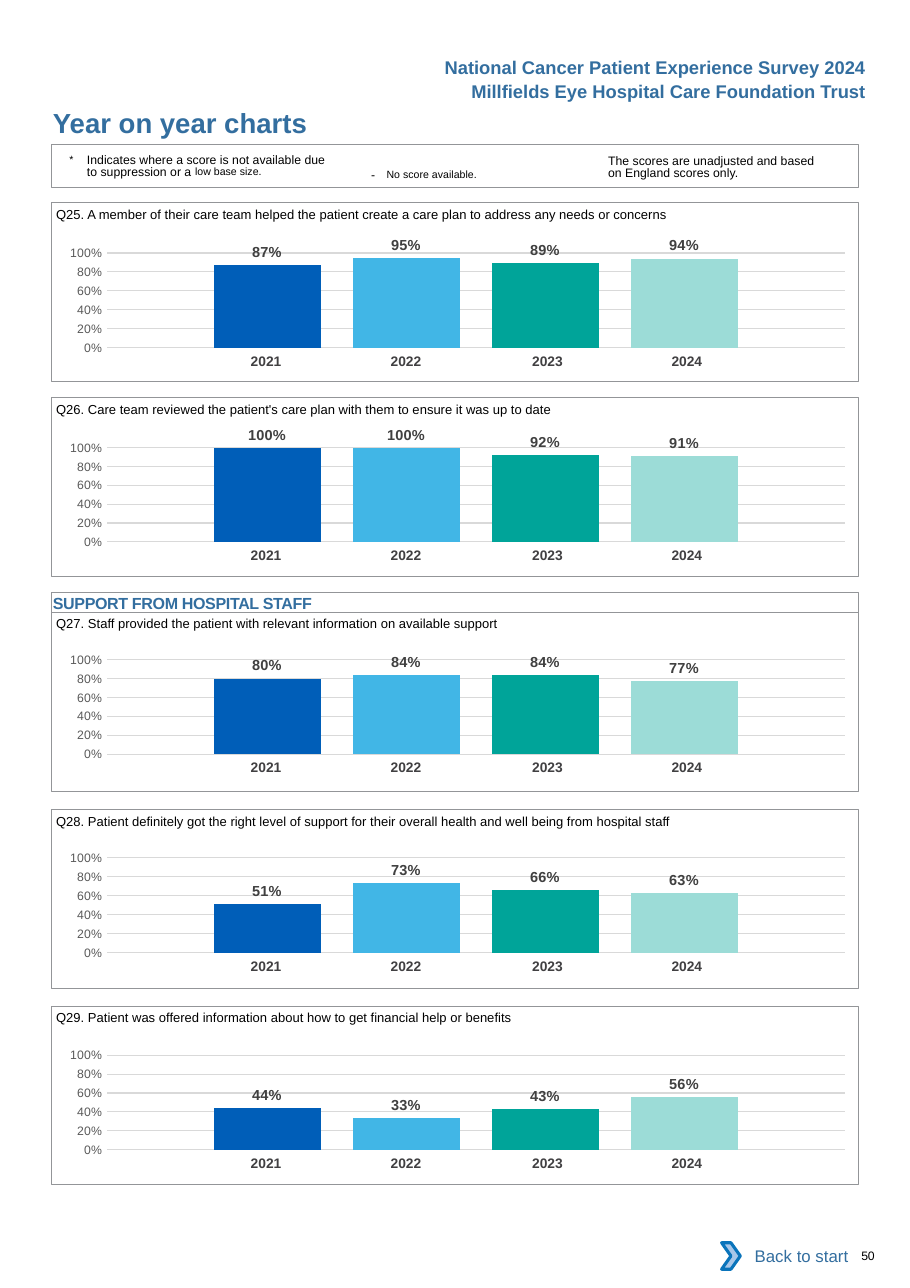
from lxml import etree
from pptx import Presentation
from pptx.chart.data import CategoryChartData
from pptx.dml.color import RGBColor
from pptx.enum import chart as ch, shapes, text as tx
from pptx.oxml.ns import qn
from pptx.util import Inches, Pt

BLUE = RGBColor(0x33, 0x6E, 0x9F)
BLACK = RGBColor(0, 0, 0)
WHITE = RGBColor(0xFF, 0xFF, 0xFF)
EDGE = RGBColor(0x93, 0x95, 0x98)
GRID = RGBColor(0xD9, 0xD9, 0xD9)
TICK = RGBColor(0x59, 0x59, 0x59)
LABEL = RGBColor(0x40, 0x40, 0x40)
YEAR = RGBColor(0x41, 0x40, 0x42)
ARROW = RGBColor(0xA8, 0xC7, 0xE9)
RIM = RGBColor(0x0A, 0x74, 0xBB)
BARS = [RGBColor(0x00, 0x5E, 0xB8), RGBColor(0x41, 0xB6, 0xE6),
        RGBColor(0x00, 0xA4, 0x99), RGBColor(0x9C, 0xDC, 0xD7)]

TITLE = "Year on year charts"
HEADS = ["National Cancer Patient Experience Survey 2024",
         "Millfields Eye Hospital Care Foundation Trust"]
SECTION = "SUPPORT FROM HOSPITAL STAFF"
YEARS = ["2021", "2022", "2023", "2024"]
# frame top, chart top, question, scores
PANELS = [
    (1.84, 2.11, "Q25. A member of their care team helped the patient create a care plan "
     "to address any needs or concerns", (0.87, 0.95, 0.89, 0.94)),
    (3.61, 3.87, "Q26. Care team reviewed the patient's care plan with them to ensure "
     "it was up to date", (1, 1, 0.92, 0.91)),
    (5.56, 5.80, "Q27. Staff provided the patient with relevant information on "
     "available support", (0.80, 0.84, 0.84, 0.77)),
    (7.35, 7.60, "Q28. Patient definitely got the right level of support for their "
     "overall health and well being from hospital staff", (0.51, 0.73, 0.66, 0.63)),
    (9.13, 9.39, "Q29. Patient was offered information about how to get financial help "
     "or benefits", (0.44, 0.33, 0.43, 0.56)),
]
# runs: text, size, baseline shift, letter spacing
SUPPRESS = [("*\t", 12, 3, 0),
            ("Indicates where a score is not available due to suppression or a ", 8, 0, 0),
            ("low base size.", 12, 7, 0)]
MISSING = [("- ", 8, 0, 2.6), ("No score available.", 12, 3, 0)]
BASIS = [("The scores are unadjusted and based on England scores only.", 8, 0, 0)]

LEFT, WIDE = 0.47, 7.32
RIGHT = 7.96
COLS = [1.27, 1.27, 1.34, 1.27]
INSETS = [0, 0, 0.04, 0.12]
PLOT = {"x": 0.079, "y": 0.145, "w": 0.915, "h": 0.666}
BARE = "{2D5ABB26-0587-4C30-8999-92F81FD0307C}"

deck = Presentation()
deck.slide_width, deck.slide_height = Inches(8.26), Inches(11.69)
page = deck.slides.add_slide(deck.slide_layouts[5])


def style(font, size, color=BLACK, bold=False):
    for key, val in {"name": "Arial", "size": Pt(size), "bold": bold}.items():
        setattr(font, key, val)
    font.color.rgb = color


def fill(frame, runs, color=BLACK, bold=False, pad=(0, 0, 0, 0),
         align=tx.PP_ALIGN.LEFT, anchor=tx.MSO_ANCHOR.TOP):
    """Write runs of (text, size, baseline, spacing) into a text frame."""
    sides = ("margin_left", "margin_top", "margin_right", "margin_bottom")
    for side, gap in zip(sides, pad):
        setattr(frame, side, Inches(gap))
    frame.word_wrap, frame.vertical_anchor = True, anchor
    para = frame.paragraphs[0]
    para.alignment = align
    for words, size, shift, space in runs:
        run = para.add_run()
        run.text = words
        style(run.font, size, color, bold)
        for key, val in {"baseline": shift * 1000, "spc": int(space * 100)}.items():
            if val:
                run._r.get_or_add_rPr().set(key, str(val))
    return para


def write(box, runs, **fmt):
    area = page.shapes.add_textbox(*map(Inches, box))
    return fill(area.text_frame, runs, **fmt)


def draw(kind, box, paint=None, line=None, width=0.5):
    form = page.shapes.add_shape(kind, *map(Inches, box))
    form.shadow.inherit = False
    for part, tint in ((form.fill, paint), (form.line.fill, line)):
        if tint is None:
            part.background()
        else:
            part.solid()
            part.fore_color.rgb = tint
    if line is not None:
        form.line.width = Pt(width)
    return form


def plot(top, scores):
    data = CategoryChartData(number_format="0%")
    data.categories = ["1"]
    for year, score in zip(YEARS, scores):
        data.add_series(year, [score])
    chart = page.shapes.add_chart(ch.XL_CHART_TYPE.COLUMN_CLUSTERED, Inches(0.39),
                                  Inches(top), Inches(WIDE), Inches(1.29), data).chart
    chart.has_legend = chart.has_title = False
    chart.font.name, chart.font.size = "Calibri", Pt(10)
    chart.category_axis.visible = False
    axis = chart.value_axis
    for key, val in {"minimum_scale": 0, "maximum_scale": 1, "major_unit": 0.2,
                     "major_tick_mark": ch.XL_TICK_MARK.NONE}.items():
        setattr(axis, key, val)
    axis.format.line.fill.background()
    rule = axis.major_gridlines.format.line
    rule.color.rgb, rule.width = GRID, Pt(0.75)
    style(axis.tick_labels.font, 8, TICK)
    bars = chart.plots[0]
    bars.gap_width, bars.overlap, bars.vary_by_categories = 200, -30, False
    for series, tint in zip(bars.series, BARS):
        series.format.fill.solid()
        series.format.fill.fore_color.rgb = tint
        tags = series.data_labels
        tags.show_value, tags.position = True, ch.XL_LABEL_POSITION.OUTSIDE_END
        style(tags.font, 9.5, LABEL, True)
    for marks in [axis.tick_labels] + [s.data_labels for s in bars.series]:
        marks.number_format, marks.number_format_is_linked = "0%", False
    place(chart)


def place(chart):
    """Fix the inner plot area at the PLOT shares of the chart."""
    area = chart._chartSpace.find(".//" + qn("c:plotArea"))
    for old in area.findall(qn("c:layout")):
        area.remove(old)
    layout = etree.Element(qn("c:layout"))
    area.insert(0, layout)
    manual = etree.SubElement(layout, qn("c:manualLayout"))
    items = [("layoutTarget", "inner"), ("xMode", "edge"), ("yMode", "edge")]
    for key, val in items + list(PLOT.items()):
        etree.SubElement(manual, qn("c:" + key)).set("val", str(val))


def label(top):
    """Lay the row of years under a chart."""
    grid = page.shapes.add_table(1, len(YEARS), Inches(1.73), Inches(top),
                                 Inches(sum(COLS)), Inches(0.27)).table
    grid.first_row = grid.horz_banding = False
    grid._tbl.tblPr.find(qn("a:tableStyleId")).text = BARE
    for i, year in enumerate(YEARS):
        grid.columns[i].width = Inches(COLS[i])
        cell = grid.cell(0, i)
        cell.fill.background()
        cell.margin_left, cell.margin_right = Inches(0.1), Inches(INSETS[i])
        para = cell.text_frame.paragraphs[0]
        para.alignment = tx.PP_ALIGN.CENTER
        run = para.add_run()
        run.text = year
        style(run.font, 9, YEAR, True)


BOX = shapes.MSO_SHAPE.RECTANGLE
END = tx.PP_ALIGN.RIGHT

title = page.shapes.title
title.left, title.top, title.width, title.height = map(Inches, (LEFT, 0.96, 4.5, 0.3))
title.text_frame.auto_size = tx.MSO_AUTO_SIZE.NONE
fill(title.text_frame, [(TITLE, 18, 0, 0)], color=BLUE, bold=True,
     pad=(0.01, 0, 0, 0), anchor=tx.MSO_ANCHOR.MIDDLE)
for i, head in enumerate(HEADS):
    write((RIGHT - 4.5, 0.46 + 0.22 * i, 4.5, 0.3), [(head, 12, 0, 0)], color=BLUE,
          bold=True, pad=(0.1, 0.05, 0.1, 0.05), align=END)

draw(BOX, (LEFT, 1.31, WIDE, 0.39), line=EDGE, width=0.75)
note = write((0.63, 1.38, 2.4, 0.27), SUPPRESS, pad=(0, 0.03, 0, 0))
hang = note._p.get_or_add_pPr()
hang.set("marL", str(Inches(0.16)))
hang.set("indent", str(-Inches(0.16)))
write((3.27, 1.41, 1.83, 0.24), MISSING, pad=(0.1, 0.05, 0.1, 0.05))
basis = write((5.52, 1.38, 2, 0.27), BASIS, pad=(0, 0.03, 0, 0))
note.line_spacing = basis.line_spacing = Pt(8.1)

for top, high, question, scores in PANELS:
    plot(high, scores)
    label(high + 1.05)
    draw(BOX, (LEFT, top, WIDE, 1.62), line=EDGE)
    write((0.5, top - 0.06, 7.2, 0.24), [(question, 8.5, 0, 0)], pad=(0.01, 0.09, 0, 0))

banner = draw(BOX, (LEFT, 5.38, WIDE, 0.18), line=EDGE)
fill(banner.text_frame, [(SECTION, 10.5, 0, -0.2)], color=BLUE, bold=True,
     pad=(0.01, 0.01, 0, 0))

back = draw(BOX, (6.62, 11.19, 1.18, 0.42), paint=WHITE)
fill(back.text_frame, [("Back to start", 11, 0, 0)], color=BLUE, align=END,
     pad=(0.1, 0.05, 0.1, 0.05), anchor=tx.MSO_ANCHOR.MIDDLE)
draw(shapes.MSO_SHAPE.CHEVRON, (6.55, 11.28, 0.17, 0.24), ARROW, RIM, 2)
write((7.72, 11.33, 0.51, 0.13), [("50", 8, 0, -0.2)], pad=(0.1, 0, 0, 0))

deck.save("out.pptx")
